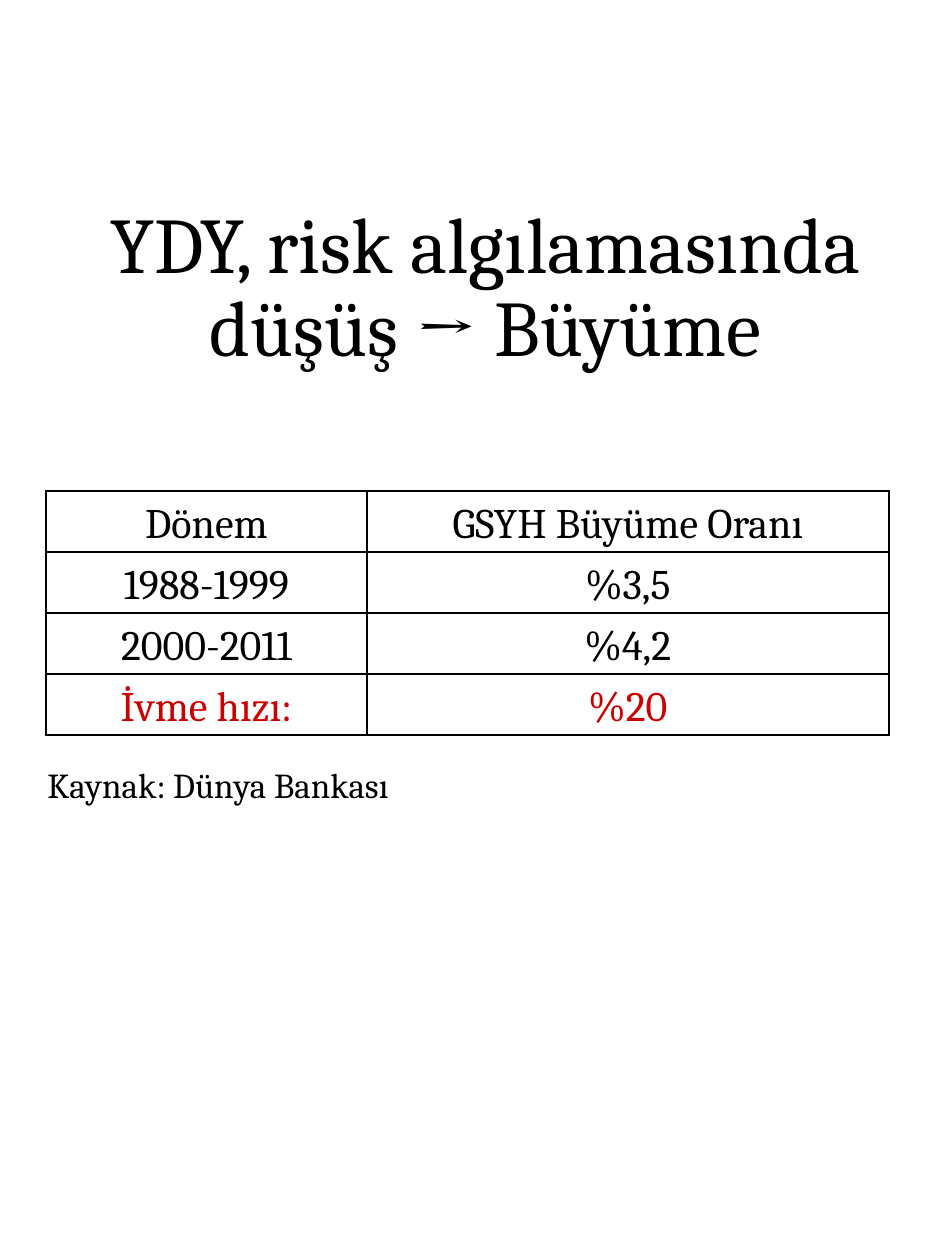
from lxml import etree
from pptx import Presentation, util as u
from pptx.dml.color import RGBColor
from pptx.enum import text
from pptx.oxml.ns import qn

FONT = "Cambria"
BLACK, RED = "000000", "CC0000"
ROWS = [
    ("Dönem", "GSYH Büyüme Oranı", BLACK),
    ("1988-1999", "%3,5", BLACK),
    ("2000-2011", "%4,2", BLACK),
    ("İvme hızı:", "%20", RED),
]
COLUMN_WIDTHS = (321, 522)
ROW_HEIGHT = 61


def px(n):
    return u.Emu(round(n * 914400 / 126))


def rgb(color):
    return RGBColor.from_string(color)


def style(p, size, color=BLACK, align=text.PP_ALIGN.LEFT):
    p.alignment = align
    p.font.name = FONT
    p.font.size = u.Pt(size)
    p.font.color.rgb = rgb(color)


def add_text(s, content, box, size, align=text.PP_ALIGN.LEFT, top=5, spacing=1.0):
    tf = s.shapes.add_textbox(*map(px, box)).text_frame
    tf.word_wrap = True
    tf.vertical_anchor = text.MSO_ANCHOR.TOP
    tf.margin_top, tf.margin_bottom = px(top), px(5)
    p = tf.paragraphs[0]
    p.text = content
    p.line_spacing = spacing
    style(p, size, align=align)


def add_borders(cell, color=BLACK, width=1):
    tc_pr = cell._tc.get_or_add_tcPr()
    for i, side in enumerate(("lnL", "lnR", "lnT", "lnB")):
        ln = etree.Element(qn("a:" + side), w=str(u.Pt(width)))
        fill = etree.SubElement(ln, qn("a:solidFill"))
        etree.SubElement(fill, qn("a:srgbClr"), val=color)
        tc_pr.insert(i, ln)


def add_growth_table(s, left, top):
    frame = s.shapes.add_table(
        len(ROWS), len(COLUMN_WIDTHS), px(left), px(top),
        px(sum(COLUMN_WIDTHS)), px(ROW_HEIGHT * len(ROWS)))
    table = frame.table
    table.horz_banding = False
    for column, width in zip(table.columns, COLUMN_WIDTHS):
        column.width = px(width)
    for row, (*values, color) in zip(table.rows, ROWS):
        row.height = px(ROW_HEIGHT)
        for cell, value in zip(row.cells, values):
            cell.fill.background()
            cell.margin_top, cell.margin_bottom = px(0), px(3)
            cell.vertical_anchor = text.MSO_ANCHOR.BOTTOM
            p = cell.text_frame.paragraphs[0]
            p.text = value
            style(p, 24, color, text.PP_ALIGN.CENTER)
            p.font.bold = False
            add_borders(cell)


def main():
    prs = Presentation()
    prs.slide_width, prs.slide_height = px(945), px(1260)
    s = prs.slides.add_slide(prs.slide_layouts[6])
    add_growth_table(s, 46, 491)
    add_text(s, "Kaynak: Dünya Bankası", (35, 759, 655, 49), 20)
    add_text(s, "YDY, risk algılamasında düşüş → Büyüme", (26, 193, 919, 228), 45,
             text.PP_ALIGN.CENTER, top=14, spacing=0.88)
    prs.save("out.pptx")


if __name__ == "__main__":
    main()
